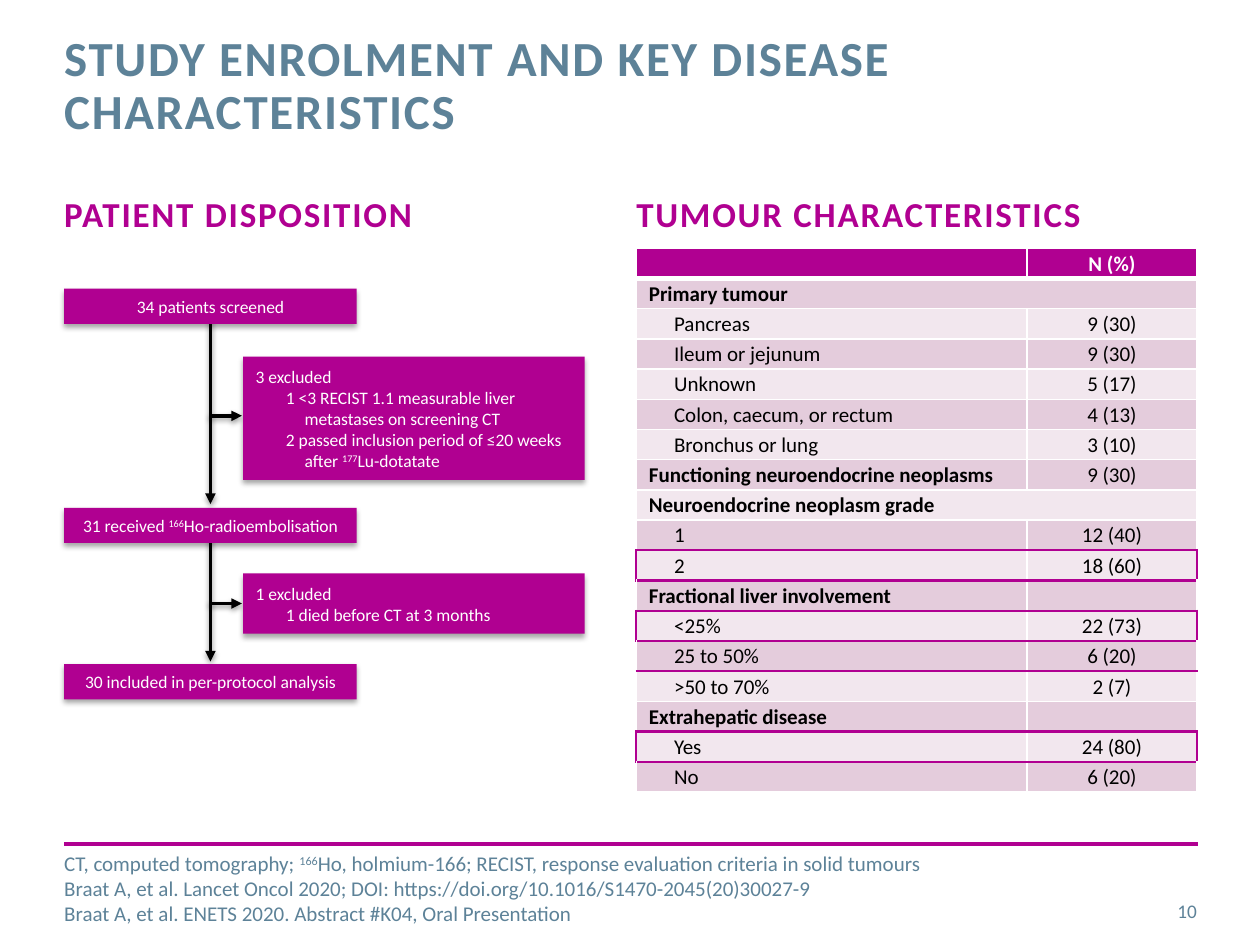
from lxml.etree import SubElement
from pptx import Presentation
from pptx.dml.color import RGBColor
from pptx.enum.shapes import MSO_CONNECTOR, MSO_SHAPE
from pptx.enum.text import MSO_ANCHOR, PP_ALIGN
from pptx.oxml.ns import qn
from pptx.util import Inches, Pt

COLORS = {name: RGBColor.from_string(value) for name, value in {
    "magenta": "B00091", "slate": "5D8298", "white": "FFFFFF",
    "black": "000000", "band_dark": "E4CCDC", "band_light": "F2E7EE",
}.items()}


def write(p, text, size, color, bold=False, align=None, spacing=0):
    """Fill a paragraph; text between carets is superscript, \\v breaks a line."""
    for i, part in enumerate(text.split("^")):
        for j, line in enumerate(part.split("\v")):
            if j:
                p.add_line_break()
            if not line:
                continue
            r = p.add_run()
            r.text = line
            if i % 2:
                r._r.get_or_add_rPr().set("baseline", "30000")
            if spacing:
                r._r.get_or_add_rPr().set("spc", str(spacing))
    p.font.name = "Calibri"
    p.font.size = Pt(size)
    p.font.bold = bold
    p.font.color.rgb = COLORS[color]
    if align is not None:
        p.alignment = align


def add_shadow(sp, opacity, distance):
    effects = SubElement(sp._element.spPr, qn("a:effectLst"))
    shadow = SubElement(effects, qn("a:outerShdw"), blurRad=str(Pt(3.1)),
                        dist=str(Pt(distance)), dir="5400000", rotWithShape="0")
    color = SubElement(shadow, qn("a:srgbClr"), val="000000")
    SubElement(color, qn("a:alpha"), val=str(opacity * 1000))


prs = Presentation()
prs.slide_width, prs.slide_height = Inches(10), Inches(7.5)
s = prs.slides.add_slide(prs.slide_layouts[5])

# Title
title = s.shapes.title
title.left, title.top = Inches(0.51), Inches(0.27)
title.width, title.height = Inches(7.17), Inches(0.88)
tf = title.text_frame
tf.margin_left = tf.margin_right = tf.margin_top = tf.margin_bottom = 0
tf.vertical_anchor = MSO_ANCHOR.TOP
tf.word_wrap = True
tf.paragraphs[0].line_spacing = Pt(30)
write(tf.paragraphs[0], "STUDY ENROLMENT AND KEY DISEASE CHARACTERISTICS",
      28, "slate", True, PP_ALIGN.LEFT, 100)

# Headings, footnotes and page number
footnotes = [
    "CT, computed tomography; ^166^Ho, holmium-166; RECIST, response evaluation "
    "criteria in solid tumours",
    "Braat A, et al. Lancet Oncol 2020; DOI: https://doi.org/10.1016/S1470-2045(20)30027-9",
    "Braat A, et al. ENETS 2020. Abstract #K04, Oral Presentation",
]
heading = (20, "magenta", True, PP_ALIGN.LEFT, 100)
for box, anchor, lines, style in [
    ((0.51, 1.53, 4.26, 0.78), MSO_ANCHOR.TOP, ["PATIENT DISPOSITION"], heading),
    ((5.05, 1.53, 4.26, 0.78), MSO_ANCHOR.TOP, ["TUMOUR CHARACTERISTICS"], heading),
    ((0.51, 6.74, 8.51, 0.61), MSO_ANCHOR.BOTTOM, footnotes, (12, "slate")),
    ((8.86, 7.03, 0.64, 0.4), MSO_ANCHOR.MIDDLE, ["10"],
     (11, "slate", False, PP_ALIGN.RIGHT)),
]:
    tf = s.shapes.add_textbox(*map(Inches, box)).text_frame
    tf.margin_left = tf.margin_right = tf.margin_top = tf.margin_bottom = 0
    tf.word_wrap = True
    tf.vertical_anchor = anchor
    for i, line in enumerate(lines):
        p = tf.add_paragraph() if i else tf.paragraphs[0]
        write(p, line, *style)

# Footer rule and flow arrows
for x1, y1, x2, y2, color, is_arrow in [
    (0.51, 6.7, 9.51, 6.7, "magenta", False),
    (1.67, 2.44, 1.67, 4, "black", True),
    (1.67, 4.16, 1.67, 5.25, "black", True),
    (1.66, 3.3, 1.92, 3.3, "black", True),
    (1.66, 4.79, 1.92, 4.79, "black", True),
]:
    line = s.shapes.add_connector(MSO_CONNECTOR.STRAIGHT,
                                  *map(Inches, (x1, y1, x2, y2)))
    line.line.color.rgb = COLORS[color]
    line.line.width = Pt(2)
    if is_arrow:
        SubElement(line.line._get_or_add_ln(), qn("a:tailEnd"), type="triangle")
        add_shadow(line, 38, 1.6)
    else:
        SubElement(line._element.spPr, qn("a:effectLst"))

# Flow boxes: the first line of an exclusion box is followed by indented reasons
for box, lines in [
    ((0.51, 2.29, 2.32, 0.28), ["34 patients screened"]),
    ((1.93, 2.83, 2.71, 0.98), [
        "3 excluded",
        "1 <3 RECIST 1.1 measurable liver\vmetastases on screening CT",
        "2 passed inclusion period of ≤20 weeks\vafter ^177^Lu-dotatate"]),
    ((0.51, 4.03, 2.32, 0.28), ["31 received ^166^Ho-radioembolisation"]),
    ((1.93, 4.55, 2.71, 0.48), ["1 excluded", "1 died before CT at 3 months"]),
    ((0.51, 5.27, 2.32, 0.28), ["30 included in per-protocol analysis"]),
]:
    sp = s.shapes.add_shape(MSO_SHAPE.RECTANGLE, *map(Inches, box))
    sp.fill.solid()
    sp.fill.fore_color.rgb = COLORS["magenta"]
    sp.line.fill.background()
    add_shadow(sp, 35, 1.8)
    tf = sp.text_frame
    tf.word_wrap = True
    tf.vertical_anchor = MSO_ANCHOR.MIDDLE
    align = PP_ALIGN.LEFT if len(lines) > 1 else PP_ALIGN.CENTER
    for i, line in enumerate(lines):
        p = tf.add_paragraph() if i else tf.paragraphs[0]
        if i:
            pPr = p._p.get_or_add_pPr()
            pPr.set("marL", str(Inches(0.39)))
            pPr.set("indent", str(Inches(-0.15)))
        write(p, line, 10, "white", False, align)

# Tumour table: (label, value, is group heading)
rows = [
    ("", "N (%)", True),
    ("Primary tumour", "", True),
    ("Pancreas", "9 (30)", False),
    ("Ileum or jejunum", "9 (30)", False),
    ("Unknown", "5 (17)", False),
    ("Colon, caecum, or rectum", "4 (13)", False),
    ("Bronchus or lung", "3 (10)", False),
    ("Functioning neuroendocrine neoplasms", "9 (30)", True),
    ("Neuroendocrine neoplasm grade", "", True),
    ("1", "12 (40)", False),
    ("2", "18 (60)", False),
    ("Fractional liver involvement", "", True),
    ("<25%", "22 (73)", False),
    ("25 to 50%", "6 (20)", False),
    (">50 to 70%", "2 (7)", False),
    ("Extrahepatic disease", "", True),
    ("Yes", "24 (80)", False),
    ("No", "6 (20)", False),
]
merged_rows = {1, 8}
boxed_rows = {10, 12, 16}
ruled_below = {9, 10, 11, 12, 13, 15, 16}

table = s.shapes.add_table(len(rows), 2, Inches(5.05), Inches(1.97),
                           Inches(4.45), Inches(0.24 * len(rows))).table
table.columns[0].width, table.columns[1].width = Inches(3.1), Inches(1.35)
for i, (label, value, is_group) in enumerate(rows):
    table.rows[i].height = Inches(0.24)
    for j, text in enumerate((label, value)):
        cell = table.cell(i, j)
        cell.margin_top, cell.margin_bottom = Inches(0.02), Inches(0.01)
        cell.vertical_anchor = MSO_ANCHOR.MIDDLE
        accents = {"L": i in boxed_rows and j == 0, "R": i in boxed_rows and j == 1,
                   "T": i - 1 in ruled_below, "B": i in ruled_below}
        for side, accent in accents.items():
            under_header = (i, side) in {(0, "B"), (1, "T")}
            width = 1.5 if accent else 3 if under_header else 1
            ln = SubElement(cell._tc.get_or_add_tcPr(), qn(f"a:ln{side}"), w=str(Pt(width)))
            fill = SubElement(ln, qn("a:solidFill"))
            SubElement(fill, qn("a:srgbClr"),
                       val=str(COLORS["magenta" if accent else "white"]))
        cell.fill.solid()
        band = "magenta" if i == 0 else "band_dark" if i % 2 else "band_light"
        cell.fill.fore_color.rgb = COLORS[band]
        p = cell.text_frame.paragraphs[0]
        if j == 0 and not is_group:
            p._p.get_or_add_pPr().set("marL", "0")
            p._p.get_or_add_pPr().set("indent", str(Inches(0.2)))
        write(p, text, 12, "white" if i == 0 else "black",
              i == 0 or (is_group and j == 0), PP_ALIGN.CENTER if j else PP_ALIGN.LEFT)
        if not text:
            SubElement(p._p, qn("a:endParaRPr"), sz="1200")
    if i in merged_rows:
        table.cell(i, 0).merge(table.cell(i, 1))

prs.save("out.pptx")
